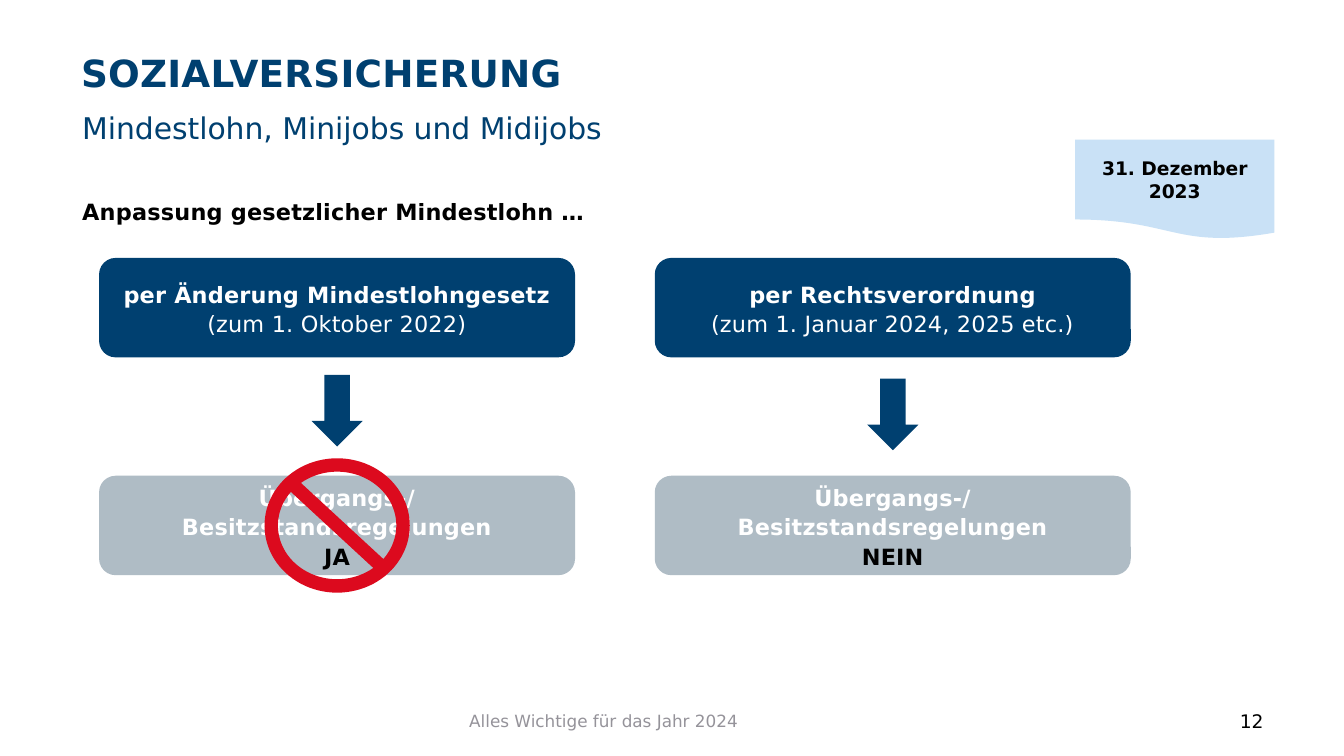
from pptx import Presentation
from pptx.dml.color import RGBColor
from pptx.enum.shapes import MSO_SHAPE
from pptx.enum.text import MSO_ANCHOR, MSO_AUTO_SIZE, PP_ALIGN
from pptx.oxml.ns import qn
from pptx.util import Pt

ROUNDED = MSO_SHAPE.ROUNDED_RECTANGLE
ARROW = MSO_SHAPE.DOWN_ARROW
PROHIBITED = MSO_SHAPE.NO_SYMBOL
DOCUMENT = MSO_SHAPE.FLOWCHART_DOCUMENT
TOP, MIDDLE = MSO_ANCHOR.TOP, MSO_ANCHOR.MIDDLE
LEFT, CENTER, RIGHT = PP_ALIGN.LEFT, PP_ALIGN.CENTER, PP_ALIGN.RIGHT

FONT = "DejaVu Sans"
NAVY, GRAY, RED, PALE = "004070", "AFBCC5", "DC0A1E", "C9E1F6"
WHITE, BLACK, MUTED = "FFFFFF", "000000", "95939A"


def color(hex_value):
    return RGBColor.from_string(hex_value)


def write(shape, *lines, size=12, ink=BLACK, bold=False, align=LEFT, anchor=TOP,
          margins=(7.2, 3.6), line_spacing=None, tracking=0):
    """Fill a shape with lines; a line is a text or a (text, changes) pair."""
    frame = shape.text_frame
    frame.word_wrap = True
    frame.auto_size = MSO_AUTO_SIZE.NONE
    frame.vertical_anchor = anchor
    frame.margin_left = frame.margin_right = Pt(margins[0])
    frame.margin_top = frame.margin_bottom = Pt(margins[1])
    for index, line in enumerate(lines):
        text, changes = (line, {}) if isinstance(line, str) else line
        paragraph = frame.add_paragraph() if index else frame.paragraphs[0]
        paragraph.alignment = align
        if line_spacing:
            paragraph.line_spacing = line_spacing
        run = paragraph.add_run()
        run.text = text
        run.font.name = FONT
        run.font.size = Pt(size)
        run.font.bold = changes.get("bold", bold)
        run.font.color.rgb = color(changes.get("ink", ink))
        if tracking:
            run.font._element.set("spc", str(round(tracking * 100)))


class SlideBuilder:
    """Holds the current slide and draws each kind of element on it."""

    def __init__(self, slide):
        self.slide = slide

    def title(self, text, x, y, width, height):
        heading = self.slide.shapes.title
        heading.left, heading.top = Pt(x), Pt(y)
        heading.width, heading.height = Pt(width), Pt(height)
        write(heading, text, size=20, ink=NAVY, bold=True, anchor=MIDDLE, tracking=0.1)

    def text(self, text, x, y, width, height, **style):
        box = self.slide.shapes.add_textbox(Pt(x), Pt(y), Pt(width), Pt(height))
        write(box, text, **style)

    def shape(self, kind, x, y, width, height, fill):
        shape = self.slide.shapes.add_shape(kind, Pt(x), Pt(y), Pt(width), Pt(height))
        shape.shadow.inherit = False
        shape.fill.solid()
        shape.fill.fore_color.rgb = color(fill)
        shape.line.fill.background()
        return shape

    def box(self, x, y, fill, *lines):
        card = self.shape(ROUNDED, x, y, BOX_WIDTH, BOX_HEIGHT, fill)
        write(card, *lines, ink=WHITE, bold=True, align=CENTER, anchor=MIDDLE,
              margins=(0, 3.6), line_spacing=1.1, tracking=0.1)


BOX_WIDTH, BOX_HEIGHT = 255, 53.3
CAUSE_TOP, RESULT_TOP = 138.2, 254.9
ARROW_WIDTH, ARROW_HEIGHT = 27.4, 38.4
SIGN_WIDTH, SIGN_HEIGHT = 77.8, 72
# left edge, arrow top, cause, date, result, prohibited
COLUMNS = [
    (53.1, 200.8, "per Änderung Mindestlohngesetz", "(zum 1. Oktober 2022)", "JA", True),
    (350.8, 202.8, "per Rechtsverordnung", "(zum 1. Januar 2024, 2025 etc.)", "NEIN", False),
]


def main():
    presentation = Presentation()
    presentation.slide_width, presentation.slide_height = Pt(720), Pt(405)
    slide = presentation.slides.add_slide(presentation.slide_layouts[5])
    builder = SlideBuilder(slide)

    builder.title("SOZIALVERSICHERUNG", 36.2, 23, 584, 32)
    builder.text("Mindestlohn, Minijobs und Midijobs", 37, 55, 584, 20, size=16, ink=NAVY)
    builder.text("Anpassung gesetzlicher Mindestlohn …", 37, 101, 584, 24, bold=True,
                 line_spacing=Pt(15.8), tracking=0.1)

    for x, arrow_top, cause, date, result, prohibited in COLUMNS:
        middle = x + BOX_WIDTH / 2
        builder.box(x, CAUSE_TOP, NAVY, cause, (date, {"bold": False}))
        builder.shape(ARROW, middle - ARROW_WIDTH / 2, arrow_top,
                      ARROW_WIDTH, ARROW_HEIGHT, NAVY)
        builder.box(x, RESULT_TOP, GRAY, "Übergangs-/ Besitzstandsregelungen",
                    (result, {"ink": BLACK}))
        if prohibited:
            sign_top = RESULT_TOP + (BOX_HEIGHT - SIGN_HEIGHT) / 2
            sign = builder.shape(PROHIBITED, middle - SIGN_WIDTH / 2, sign_top,
                                 SIGN_WIDTH, SIGN_HEIGHT, RED)
            sign.adjustments[0] = 0.1

    deadline = builder.shape(DOCUMENT, 576, 74.9, 106.8, 53.3, PALE)
    deadline._element.spPr.find(qn("a:xfrm")).set("flipH", "1")
    write(deadline, "31. Dezember 2023", size=10, bold=True, align=CENTER, anchor=MIDDLE)

    builder.text("Alles Wichtige für das Jahr 2024", 246.4, 375.3, 228, 21.6, size=9,
                 ink=MUTED, anchor=MIDDLE, margins=(5, 2.9))
    builder.text("12", 516, 375.3, 168, 21.6, size=10, align=RIGHT, anchor=MIDDLE)

    presentation.save("out.pptx")


if __name__ == "__main__":
    main()
